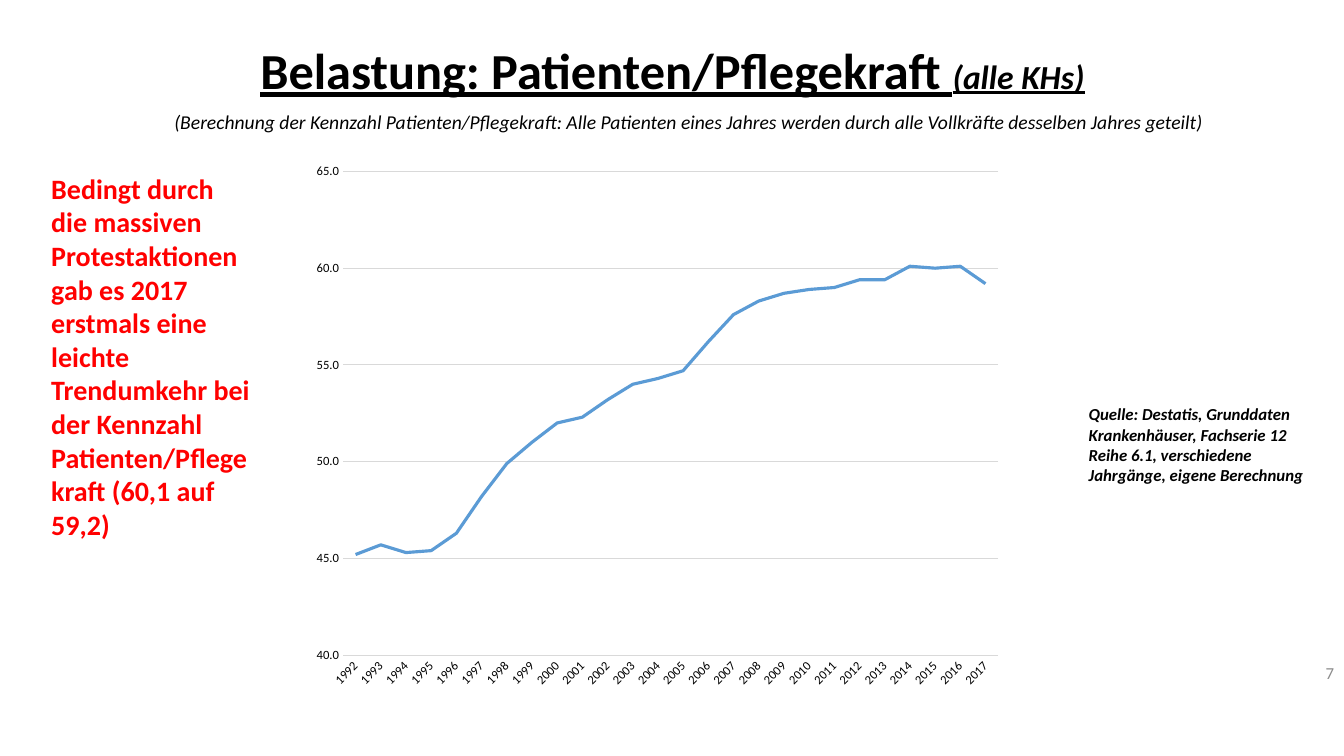
import pptx
import pptx.util
import pptx.chart.data
import pptx.dml.color
import pptx.enum.chart
import pptx.enum.text

Color = pptx.dml.color.RGBColor
Align = pptx.enum.text.PP_ALIGN
Anchor = pptx.enum.text.MSO_ANCHOR
Tick = pptx.enum.chart.XL_TICK_MARK

BLACK = Color(0x00, 0x00, 0x00)
RED = Color(0xFF, 0x00, 0x00)
GRAY = Color(0x8C, 0x8C, 0x8C)
RULE = Color(0xD9, 0xD9, 0xD9)
BLUE = Color(0x5B, 0x9B, 0xD5)

FIRST = 1992
LOADS = [45.2, 45.7, 45.3, 45.4, 46.3, 48.2, 49.9, 51, 52, 52.3, 53.2, 54, 54.3,
         54.7, 56.2, 57.6, 58.3, 58.7, 58.9, 59, 59.4, 59.4, 60.1, 60, 60.1, 59.2]


def px(count):
    """Turn px, at 100 to the inch, into EMU."""
    return pptx.util.Emu(count * 9144)


class Deck:
    face = "Calibri"

    def __init__(self, width, height):
        self.file = pptx.Presentation()
        self.file.slide_width = px(width)
        self.file.slide_height = px(height)
        self.slide = self.file.slides.add_slide(self.file.slide_layouts[6])

    def style(self, font, size, color=BLACK, **form):
        form = {"name": self.face, "size": pptx.util.Pt(size), **form}
        for key, value in form.items():
            setattr(font, key, value)
        font.color.rgb = color

    def text(self, box, runs, align=Align.LEFT, anchor=Anchor.TOP, space=None):
        """Add one paragraph; runs are pairs of wording and format."""
        frame = self.slide.shapes.add_textbox(*map(px, box)).text_frame
        frame.word_wrap = True
        frame.vertical_anchor = anchor
        para = frame.paragraphs[0]
        para.alignment = align
        para.line_spacing = space
        for words, form in runs:
            run = para.add_run()
            run.text = words
            self.style(run.font, **form)

    def rule(self, line, color, width):
        line.color.rgb = color
        line.width = pptx.util.Pt(width)

    def chart(self, box, first, values):
        data = pptx.chart.data.CategoryChartData(number_format="0.0")
        data.categories = [str(first + step) for step in range(len(values))]
        data.add_series("Patienten/Pflegekraft", values)
        kind = pptx.enum.chart.XL_CHART_TYPE.LINE
        chart = self.slide.shapes.add_chart(kind, *map(px, box), data).chart
        chart.has_legend = False
        chart.has_title = False
        self.style(chart.font, 10)

        plot = chart.plots[0]
        plot.vary_by_categories = False
        loads = plot.series[0]
        loads.smooth = False
        loads.marker.style = pptx.enum.chart.XL_MARKER_STYLE.NONE
        self.rule(loads.format.line, BLUE, 2.25)

        years, scale = chart.category_axis, chart.value_axis
        for axis in (years, scale):
            axis.major_tick_mark = axis.minor_tick_mark = Tick.NONE
            self.style(axis.tick_labels.font, 9)
        self.rule(years.format.line, RULE, 0.75)
        body = years._element.txPr.bodyPr
        body.set("rot", str(-45 * 60000))
        body.set("vert", "horz")

        limits = {"minimum_scale": 40, "maximum_scale": 65, "major_unit": 5}
        for key, value in limits.items():
            setattr(scale, key, value)
        scale.format.line.fill.background()
        self.rule(scale.major_gridlines.format.line, RULE, 0.75)
        scale.tick_labels.number_format = "0.0"
        scale.tick_labels.number_format_is_linked = False


def main():
    deck = Deck(1333, 750)
    head = {"bold": True, "underline": True}
    deck.text((92, 0, 1150, 145),
              [("Belastung: Patienten/Pflegekraft ", {"size": 36, **head}),
               ("(alle KHs)", {"size": 24, "italic": True, **head})],
              Align.CENTER, Anchor.MIDDLE, 0.9)
    deck.text((1033, 653, 300, 40), [("7", {"size": 12, "color": GRAY})], Align.RIGHT)
    deck.text((163, 104, 1041, 34),
              [("(Berechnung der Kennzahl Patienten/Pflegekraft: Alle Patienten eines Jahres "
                "werden durch alle Vollkräfte desselben Jahres geteilt)",
                {"size": 14, "italic": True})])
    deck.chart((300, 152, 704, 541), FIRST, LOADS)
    deck.text((41, 165, 217, 380),
              [("Bedingt durch die massiven Protestaktionen gab es 2017 erstmals eine leichte "
                "Trendumkehr bei der Kennzahl Patienten/Pflegekraft (60,1 auf 59,2)",
                {"size": 20, "color": RED, "bold": True})])
    deck.text((1070, 396, 247, 91),
              [("Quelle: Destatis, Grunddaten Krankenhäuser, Fachserie 12 Reihe 6.1, "
                "verschiedene Jahrgänge, eigene Berechnung",
                {"size": 12, "bold": True, "italic": True})])
    deck.file.save("out.pptx")


if __name__ == "__main__":
    main()
